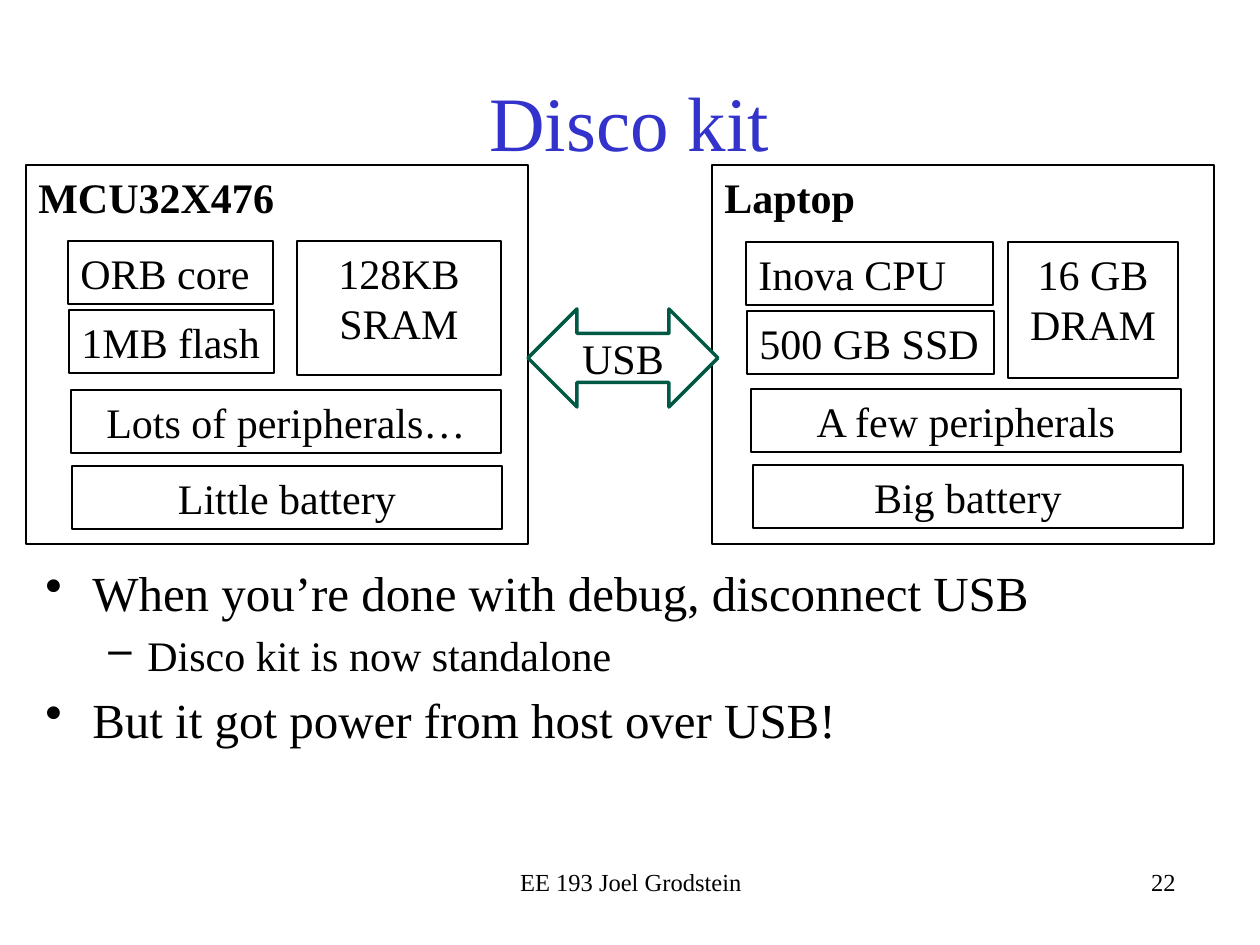
from pptx import Presentation
from pptx.dml.color import RGBColor
from pptx.enum.shapes import MSO_SHAPE as Shape
from pptx.enum.text import MSO_ANCHOR as Anchor, PP_ALIGN as Align
from pptx.oxml.ns import qn
from pptx.util import Emu, Pt
from lxml.etree import SubElement

SCALE = 914400 / 126
FONT = "Times New Roman"
BLACK = RGBColor(0x00, 0x00, 0x00)
WHITE = RGBColor(0xFF, 0xFF, 0xFF)
BLUE = RGBColor(0x33, 0x33, 0xCC)
GREEN = RGBColor(0x00, 0x59, 0x43)


def px(n):
    """Turn pixels into EMU."""
    return Emu(round(n * SCALE))


def write(frame, text, size=24, color=BLACK, bold=False, align=Align.LEFT,
          anchor=Anchor.TOP, more=False):
    """Write one paragraph into a text frame and return it."""
    frame.word_wrap = True
    frame.vertical_anchor = anchor
    para = frame.add_paragraph() if more else frame.paragraphs[0]
    para.alignment = align
    run = para.add_run()
    run.text = text
    font = run.font
    font.name, font.size, font.bold = FONT, Pt(size), bold
    font.color.rgb = color
    return para


def label(slide, box, text, **form):
    """Place a text box holding one paragraph."""
    area = slide.shapes.add_textbox(*map(px, box))
    write(area.text_frame, text, **form)


def block(slide, box, text, kind=Shape.RECTANGLE, fill=None, line=BLACK,
          width=1.5, **form):
    """Place an outlined shape with text."""
    shape = slide.shapes.add_shape(kind, *map(px, box))
    shape.shadow.inherit = False
    if fill is None:
        shape.fill.background()
    else:
        shape.fill.solid()
        shape.fill.fore_color.rgb = fill
    shape.line.color.rgb = line
    shape.line.width = Pt(width)
    write(shape.text_frame, text, **form)


def board(slide, box, name, parts):
    """Draw a computer as a titled panel with its parts inside."""
    left, top = box[:2]
    block(slide, box, name, bold=True)
    for x, y, w, h, text, align in parts:
        block(slide, (left + x, top + y, w, h), text, align=align)


def points(slide, box, items):
    """Write the two-level bullet list."""
    frame = slide.shapes.add_textbox(*map(px, box)).text_frame
    looks = [("•", 28, 47, 47), ("–", 24, 102, 39)]
    for i, (level, text) in enumerate(items):
        mark, size, margin, hang = looks[level]
        para = write(frame, text, size=size, more=i > 0)
        para.level = level
        para.space_before = Pt(size * 0.2)
        props = para._p.get_or_add_pPr()
        props.set("marL", str(px(margin)))
        props.set("indent", str(-px(hang)))
        SubElement(props, qn("a:buChar")).set("char", mark)


def footer(slide, box, text, page):
    """Write the centred footer and the page number at the right."""
    left, top, width, height = box
    label(slide, box, text, size=14, align=Align.CENTER)
    label(slide, (left + 357, top, width, height), page, size=14,
          align=Align.RIGHT)


def main():
    """Build and save the slide."""
    deck = Presentation()
    deck.slide_width, deck.slide_height = px(1260), px(945)
    slide = deck.slides.add_slide(deck.slide_layouts[6])

    label(slide, (94, 42, 1071, 158), "Disco kit", size=44, color=BLUE,
          align=Align.CENTER, anchor=Anchor.MIDDLE)
    board(slide, (26, 165, 502, 379), "MCU32X476", [
        (42, 76, 205, 63, "ORB core", Align.LEFT),
        (43, 145, 205, 63, "1MB flash", Align.LEFT),
        (271, 76, 204, 134, "128KB SRAM", Align.CENTER),
        (45, 225, 430, 63, "Lots of peripherals…", Align.CENTER),
        (46, 301, 430, 63, "Little battery", Align.CENTER),
    ])
    board(slide, (712, 165, 502, 379), "Laptop", [
        (34, 77, 247, 63, "Inova CPU", Align.LEFT),
        (35, 146, 247, 63, "500 GB SSD", Align.LEFT),
        (296, 77, 170, 136, "16 GB DRAM", Align.CENTER),
        (39, 224, 430, 63, "A few peripherals", Align.CENTER),
        (41, 300, 430, 63, "Big battery", Align.CENTER),
    ])
    block(slide, (528, 309, 190, 98), "USB", kind=Shape.LEFT_RIGHT_ARROW,
          fill=WHITE, line=GREEN, width=2, align=Align.CENTER,
          anchor=Anchor.MIDDLE)
    points(slide, (33, 556, 1179, 280), [
        (0, "When you’re done with debug, disconnect USB"),
        (1, "Disco kit is now standalone"),
        (0, "But it got power from host over USB!"),
    ])
    footer(slide, (431, 861, 400, 63), "EE 193 Joel Grodstein", "22")
    deck.save("out.pptx")


if __name__ == "__main__":
    main()
